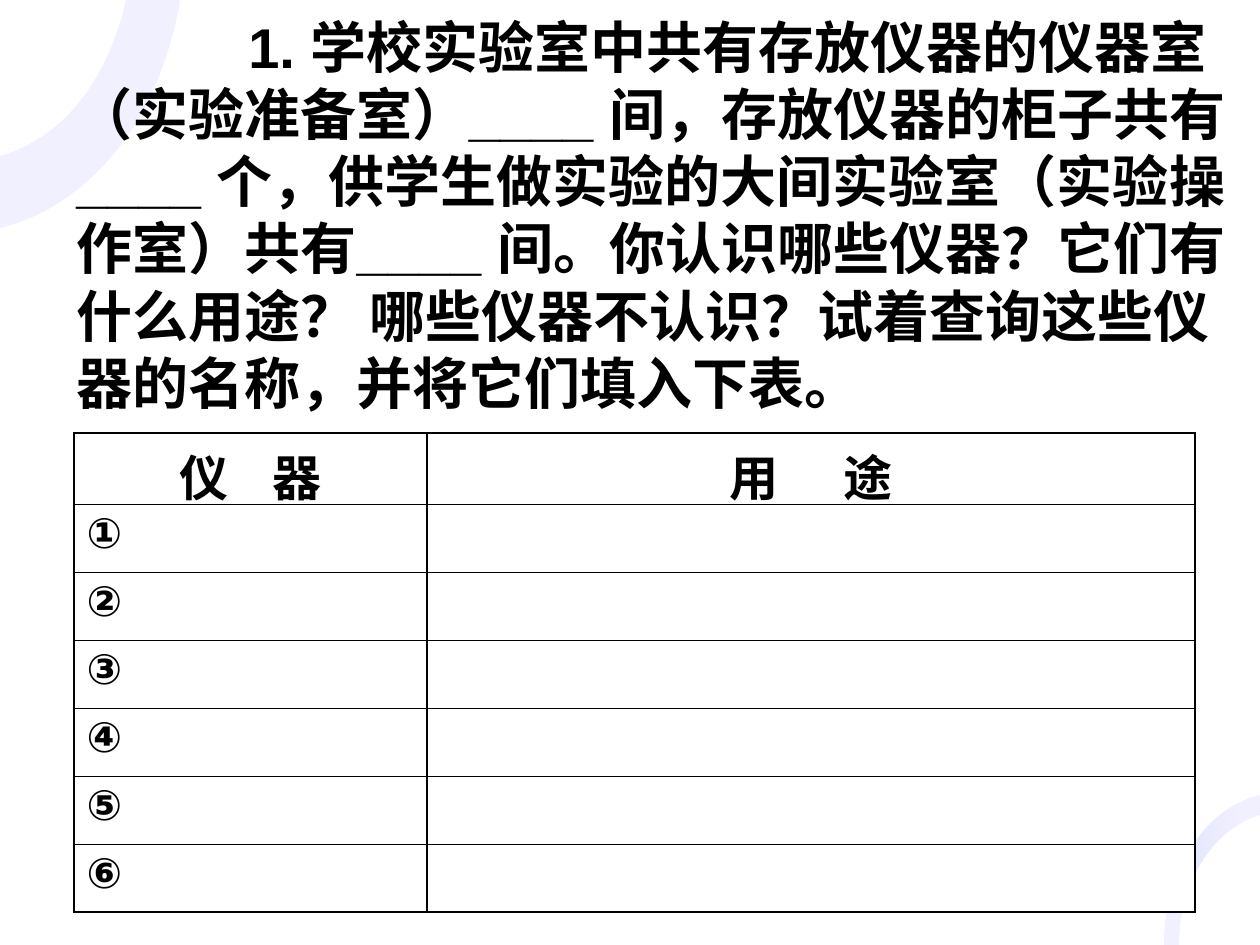
from dataclasses import dataclass

from lxml import etree
from pptx import Presentation
from pptx import util as u
from pptx.dml.color import RGBColor
from pptx.enum import text
from pptx.oxml.ns import qn

PX = u.Inches(1) / 126


@dataclass(frozen=True)
class Theme:
    ink: str = "000000"
    paper: str = "FFFFFF"
    lilac: str = "776CFD"
    blue: str = "5D95F1"
    body_font: str = "Arial"
    head_font: str = "Calibri"
    body: int = 32
    head: int = 28
    item: int = 24
    outer: float = 1.5
    inner: float = 1


def px(n):
    return u.Emu(round(n * PX))


def rgb(c):
    return RGBColor.from_string(c)


def add_run(p, txt, *, font, size, color, bold=True, spacing=0):
    r = p.add_run()
    r.text = txt
    r.font.name, r.font.size, r.font.bold = font, u.Pt(size), bold
    r.font.color.rgb = rgb(color)
    if spacing:
        r.font._element.set("spc", str(round(spacing * 100)))


def set_alpha(fill_xml, percents):
    for clr, a in zip(fill_xml.iter(qn("a:srgbClr")), percents):
        etree.SubElement(clr, qn("a:alpha")).set("val", str(a * 1000))


def bend(sp, segments):
    lines = iter(list(sp._element.iter(qn("a:lnTo"))))
    for seg in segments:
        parts = [next(lines) for _ in seg]
        if len(parts) == 3:
            curve = etree.Element(qn("a:cubicBezTo"))
            parts[0].addprevious(curve)
            for part in parts:
                curve.append(part[0])
                part.getparent().remove(part)


class Deck:
    def __init__(self, theme, width, height):
        self.theme = theme
        self.prs = Presentation()
        self.prs.slide_width, self.prs.slide_height = px(width), px(height)
        self.s = self.prs.slides.add_slide(self.prs.slide_layouts[6])
        self.s.background.fill.solid()
        self.s.background.fill.fore_color.rgb = rgb(theme.paper)

    def swoosh(self, start, segments, gradient=False):
        fb = self.s.shapes.build_freeform(*start, scale=PX)
        fb.add_line_segments([pt for seg in segments for pt in seg], close=True)
        sp = fb.convert_to_shape()
        bend(sp, segments)
        sp.shadow.inherit = False
        sp.line.fill.background()
        if gradient:
            sp.fill.gradient()
            sp.fill.gradient_angle = 0
            for stop, pos in zip(sp.fill.gradient_stops, (0, 0.7)):
                stop.color.rgb = rgb(self.theme.blue)
                stop.position = pos
            for clr in sp._element.spPr.iter(qn("a:srgbClr")):
                for child in list(clr):
                    clr.remove(child)
            set_alpha(sp._element.spPr, (10, 0))
        else:
            sp.fill.solid()
            sp.fill.fore_color.rgb = rgb(self.theme.lilac)
            set_alpha(sp._element.spPr, (10,))

    def textbox(self, x, y, w, h, paragraphs, first_indent):
        t = self.theme
        tf = self.s.shapes.add_textbox(px(x), px(y), px(w), px(h)).text_frame
        tf.word_wrap = True
        tf.auto_size = text.MSO_AUTO_SIZE.SHAPE_TO_FIT_TEXT
        for i, txt in enumerate(paragraphs):
            p = tf.add_paragraph() if i else tf.paragraphs[0]
            add_run(p, txt, font=t.body_font, size=t.body, color=t.ink)
        tf.paragraphs[0]._p.get_or_add_pPr().set("indent", str(px(first_indent)))

    def cell_style(self, cell, edges):
        tc_pr = cell._tc.get_or_add_tcPr()
        for side, is_outer in zip("LRTB", edges):
            width = self.theme.outer if is_outer else self.theme.inner
            ln = etree.SubElement(tc_pr, qn(f"a:ln{side}"), w=str(u.Pt(width)))
            fill = etree.SubElement(ln, qn("a:solidFill"))
            etree.SubElement(fill, qn("a:srgbClr"), val=self.theme.ink)
        cell.fill.solid()
        cell.fill.fore_color.rgb = rgb(self.theme.paper)

    def table(self, x, y, cols, rows, headings, items):
        t = self.theme
        tbl = self.s.shapes.add_table(len(rows), len(cols), px(x), px(y),
                                      px(sum(cols)), px(sum(rows))).table
        for col, w in zip(tbl.columns, cols):
            col.width = px(w)
        for row, h in zip(tbl.rows, rows):
            row.height = px(h)
        for i in range(len(rows)):
            for j in range(len(cols)):
                self.cell_style(tbl.cell(i, j), (j == 0, j == len(cols) - 1,
                                                 i == 0, i == len(rows) - 1))
        for j, (first, last, spacing) in enumerate(headings):
            cell = tbl.cell(0, j)
            cell.vertical_anchor = text.MSO_ANCHOR.MIDDLE
            p = cell.text_frame.paragraphs[0]
            p.alignment = text.PP_ALIGN.CENTER
            p.space_before = u.Pt(t.head * 0.2)
            style = dict(font=t.head_font, size=t.head, color=t.ink)
            add_run(p, first + " ", spacing=spacing, **style)
            add_run(p, last, **style)
        for i, item in enumerate(items, 1):
            p = tbl.cell(i, 0).text_frame.paragraphs[0]
            p.space_before = u.Pt(t.item * 0.2)
            add_run(p, item, font=t.body_font, size=t.item, color=t.ink)


def main():
    deck = Deck(Theme(), 1260, 945)
    deck.swoosh((0, 156), [
        ((40, 145), (76, 116), (101, 69)), ((112, 48), (121, 24), (126, 0)),
        ((180, 0),),
        ((174, 38), (161, 76), (144, 110)), ((107, 175), (55, 215), (0, 228)),
        ((0, 156),)])
    deck.swoosh((1260, 795), [
        ((1206, 808), (1164, 869), (1164, 945)), ((1179, 945),),
        ((1179, 881), (1215, 828), (1260, 815)), ((1260, 795),)])
    deck.swoosh((1260, 795), [
        ((1260, 815),),
        ((1232, 823), (1210, 844), (1194, 874)),
        ((1193, 879), (1188, 881), (1184, 878)),
        ((1181, 874), (1181, 868), (1182, 864)),
        ((1199, 828), (1227, 803), (1260, 795))], gradient=True)
    deck.textbox(64, 6, 1184, 420, [
        "1. 学校实验室中共有存放仪器的仪器室",
        "（实验准备室）____ 间，存放仪器的柜子共有____ 个，"
        "供学生做实验的大间实验室（实验操作室）共有____ 间。"
        "你认识哪些仪器？它们有什么用途？ 哪些仪器不认识？"
        "试着查询这些仪器的名称，并将它们填入下表。"], first_indent=172)
    items = "①②③④⑤⑥"
    deck.table(74, 433, (353, 768), [71] + [68] * len(items),
               [("仪", "器", 9.5), ("用", "途", 15.5)], items)
    deck.prs.save("out.pptx")


if __name__ == "__main__":
    main()
